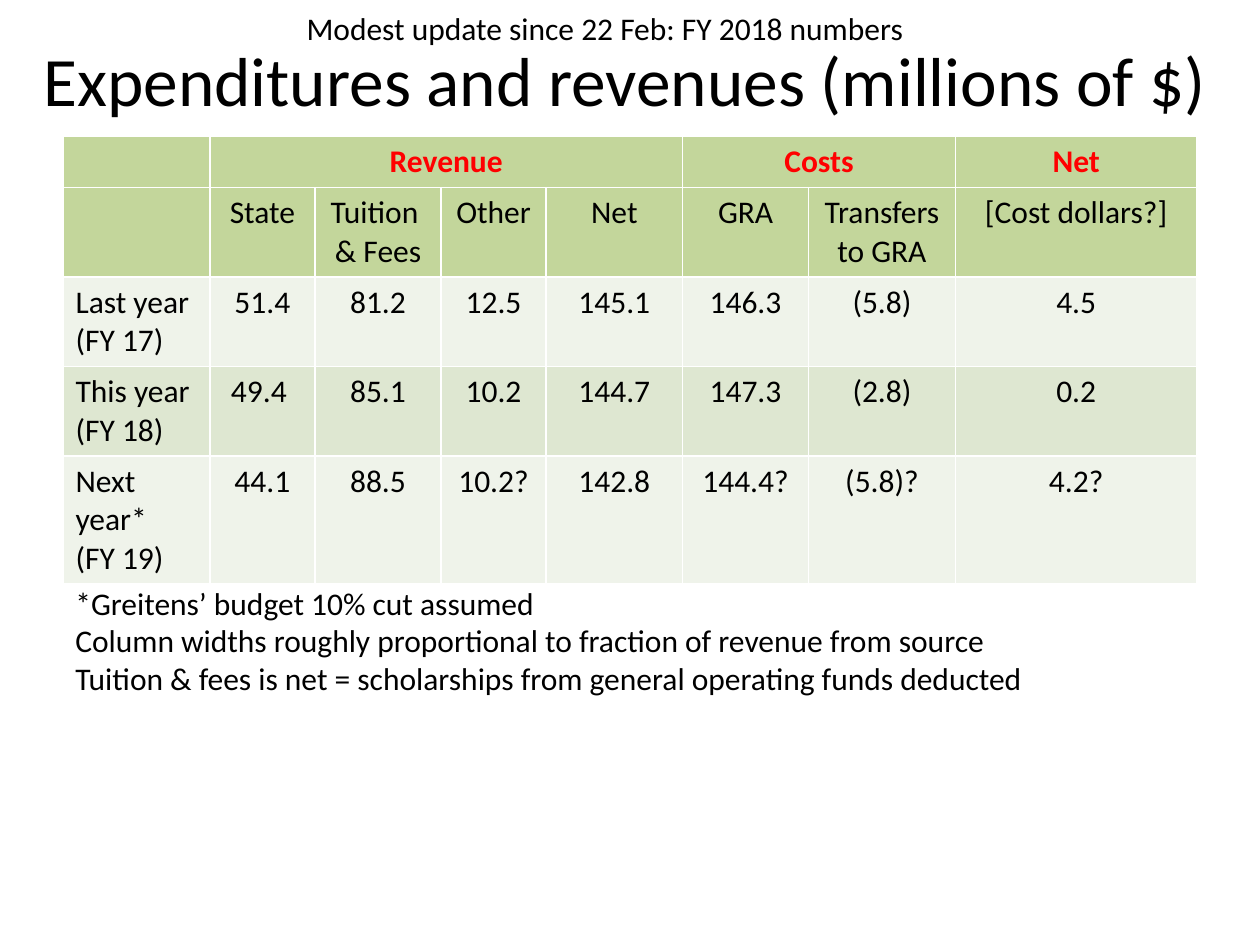
import pptx
import pptx.util
import pptx.dml.color
import pptx.enum.text

Cm = pptx.util.Cm
ALIGN = pptx.enum.text.PP_ALIGN
ANCHOR = pptx.enum.text.MSO_ANCHOR
FIT = pptx.enum.text.MSO_AUTO_SIZE

COLS = [2.96, 2.12, 2.54, 2.12, 2.75, 2.54, 2.96, 4.87]
ROWS = [1.03, 1.8, 1.8, 1.8, 2.56]
FILLS = ["C3D69B", "C3D69B", "EFF3EA", "DEE7D1", "EFF3EA"]
SPANS = [(1, 4), (5, 6)]
CELLS = [
    ["", "Revenue", "", "", "", "Costs", "", "Net"],
    ["", "State", "Tuition \n& Fees", "Other", "Net", "GRA",
     "Transfers to GRA", "[Cost dollars?]"],
    ["Last year (FY 17)", "51.4", "81.2", "12.5", "145.1", "146.3", "(5.8)", "4.5"],
    ["This year (FY 18)", "49.4 ", "85.1", "10.2", "144.7", "147.3", "(2.8)", "0.2"],
    ["Next year*\n(FY 19)", "44.1", "88.5", "10.2?", "142.8", "144.4?", "(5.8)?", "4.2?"],
]
NOTES = [
    "*Greitens’ budget 10% cut assumed",
    "Column widths roughly proportional to fraction of revenue from source",
    "Tuition & fees is net = scholarships from general operating funds deducted",
]


def paint(color, code):
    color.rgb = pptx.dml.color.RGBColor.from_string(code)


def write(frame, text, size=18, color="000000", bold=False, align=ALIGN.LEFT):
    frame.text = text
    for para in frame.paragraphs:
        para.alignment = align
        para.font.size = pptx.util.Pt(size)
        for run in para.runs:
            run.font.name = "Calibri"
            run.font.size = pptx.util.Pt(size)
            run.font.bold = bold
            paint(run.font.color, color)


def add_title(slide, left, top, width, height):
    title = slide.shapes.title
    title.left, title.top = Cm(left), Cm(top)
    title.width, title.height = Cm(width), Cm(height)
    frame = title.text_frame
    frame.vertical_anchor = ANCHOR.MIDDLE
    write(frame, "Expenditures and revenues (millions of $)",
          size=39.6, align=ALIGN.CENTER)


def add_budget(slide, left, top, width, height):
    table = slide.shapes.add_table(len(ROWS), len(COLS), Cm(left), Cm(top),
                                   Cm(width), Cm(height)).table
    for col, share in zip(table.columns, COLS):
        col.width = Cm(width * share / sum(COLS))
    for row, share in zip(table.rows, ROWS):
        row.height = Cm(height * share / sum(ROWS))
    for first, last in SPANS:
        table.cell(0, first).merge(table.cell(0, last))
    for r, (texts, fill) in enumerate(zip(CELLS, FILLS)):
        head = r == 0
        for c, text in enumerate(texts):
            cell = table.cell(r, c)
            cell.fill.solid()
            paint(cell.fill.fore_color, fill)
            write(cell.text_frame, text, bold=head,
                  color="FF0000" if head else "000000",
                  align=ALIGN.CENTER if c else ALIGN.LEFT)


def add_text(slide, text, left, top, width, height, wrap=True):
    box = slide.shapes.add_textbox(Cm(left), Cm(top), Cm(width), Cm(height))
    frame = box.text_frame
    frame.word_wrap = wrap
    frame.auto_size = FIT.SHAPE_TO_FIT_TEXT
    write(frame, text)


def main():
    deck = pptx.Presentation()
    deck.slide_width, deck.slide_height = Cm(25.4), Cm(19.05)
    slide = deck.slides.add_slide(deck.slide_layouts[5])
    add_title(slide, 0, 0, 25.2, 3.18)
    add_budget(slide, 1.27, 2.75, sum(COLS), sum(ROWS))
    add_text(slide, "\n".join(NOTES), 1.27, 11.64, 22.86, 2.57)
    add_text(slide, "Modest update since 22 Feb: FY 2018 numbers",
             5.93, 0.05, 12.7, 1.03, wrap=False)
    deck.save("out.pptx")


if __name__ == "__main__":
    main()
